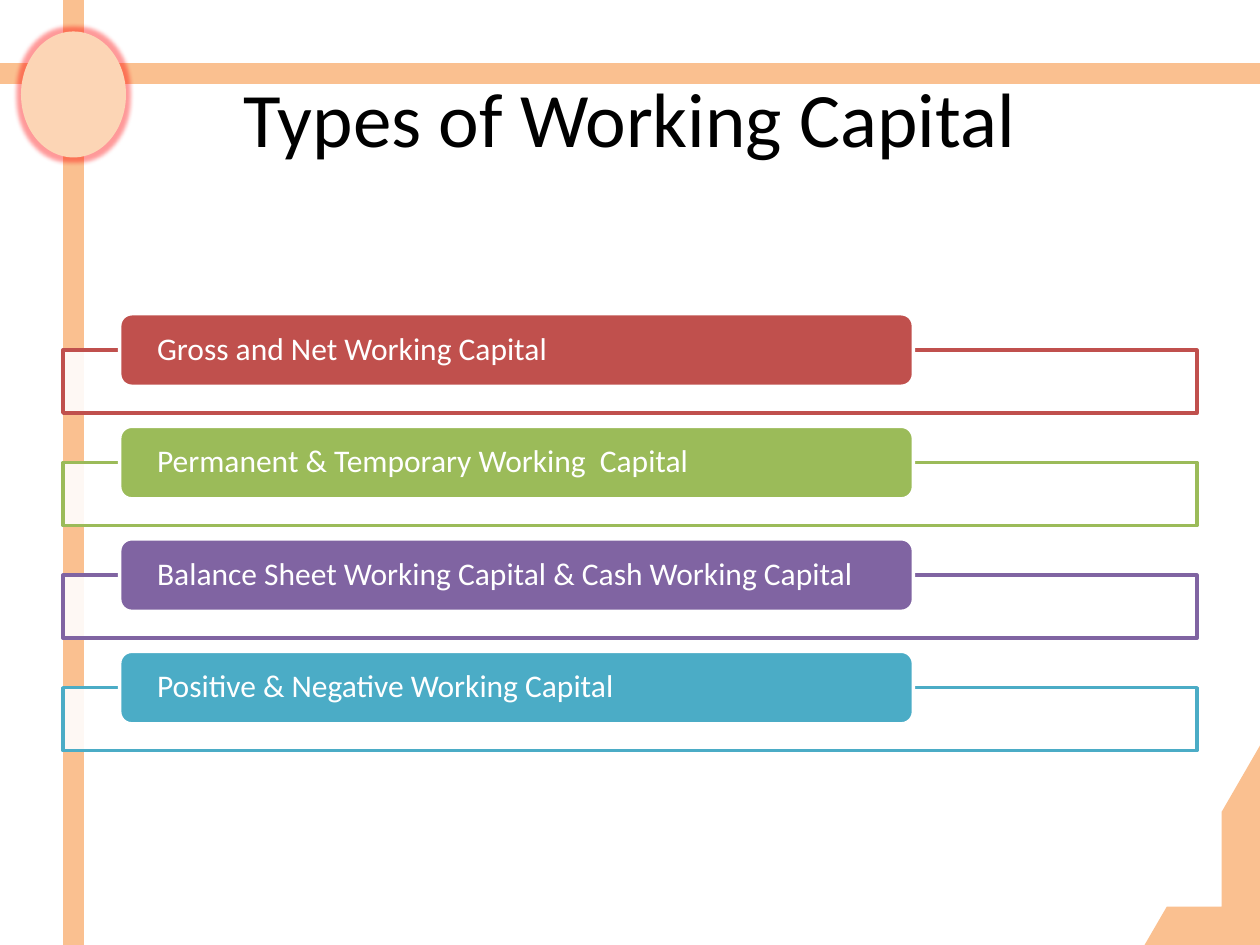
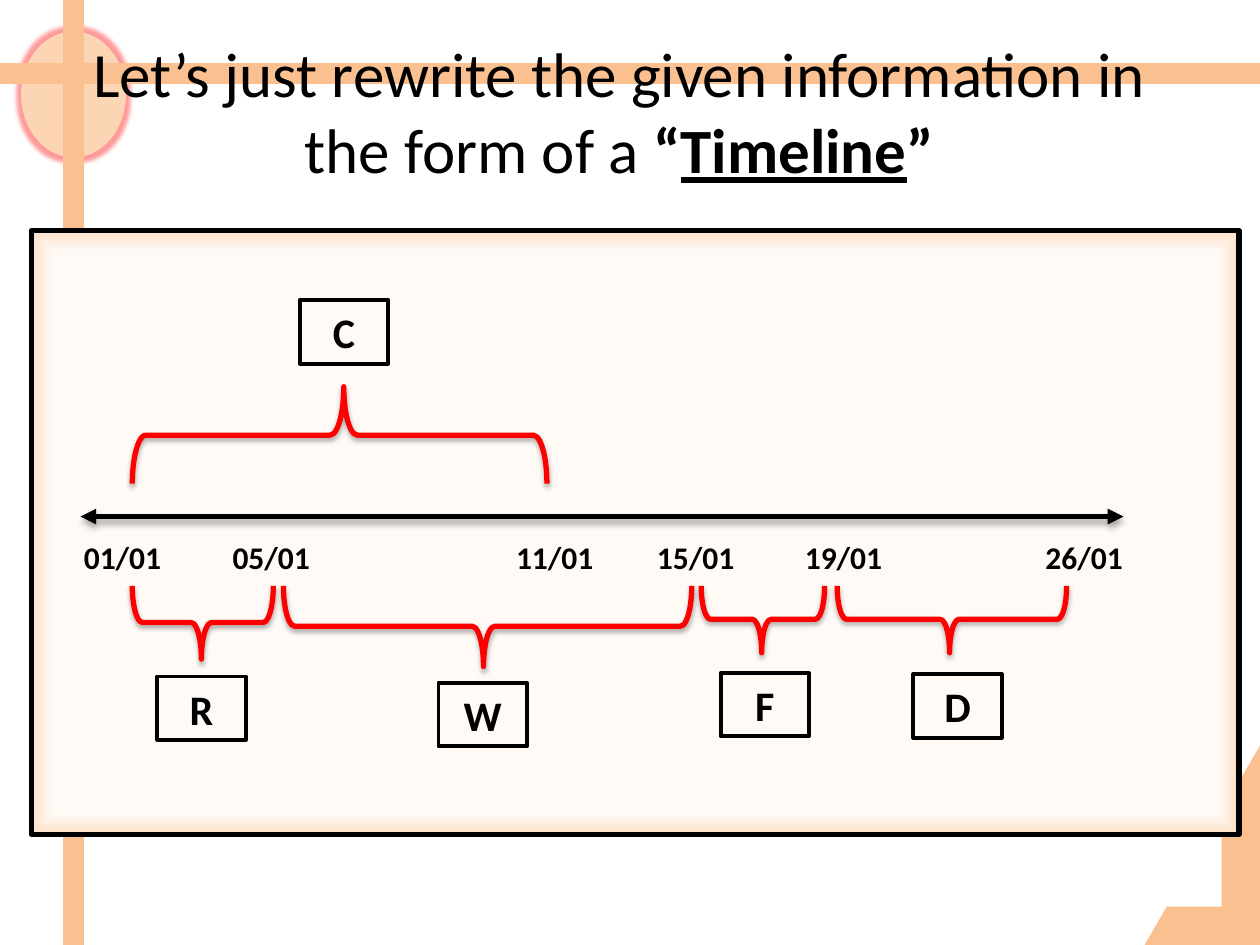
from lxml.etree import SubElement
from pptx import Presentation
from pptx.dml.color import RGBColor
from pptx.enum.shapes import MSO_CONNECTOR, MSO_SHAPE
from pptx.enum.text import MSO_ANCHOR, PP_ALIGN
from pptx.oxml import parse_xml
from pptx.oxml.ns import nsdecls, qn
from pptx.util import Pt

FONT = "Calibri"
BLACK = RGBColor(0x00, 0x00, 0x00)
WHITE = RGBColor(0xFF, 0xFF, 0xFF)
RED = RGBColor(0xFF, 0x00, 0x00)
ORANGE = RGBColor(0xFA, 0xC0, 0x90)
PEACH = RGBColor(0xFC, 0xD5, 0xB5)
BRICK = RGBColor(0xC0, 0x50, 0x4D)
GREEN = RGBColor(0x9B, 0xBB, 0x59)
PURPLE = RGBColor(0x80, 0x64, 0xA2)
TEAL = RGBColor(0x4B, 0xAC, 0xC6)
CREAM = RGBColor(0xFF, 0xFA, 0xF6)
APRICOT = RGBColor(0xFD, 0xE0, 0xC7)

NO_EFFECT = f'<a:effectLst {nsdecls("a")}/>'
GLOW = (
    f'<a:effectLst {nsdecls("a")}><a:glow rad="63500"><a:srgbClr val="{RED}">'
    '<a:alpha val="40000"/></a:srgbClr></a:glow></a:effectLst>'
)
SHADOW = (
    f'<a:effectLst {nsdecls("a")}><a:outerShdw blurRad="39400" dist="22900" dir="5400000" '
    f'rotWithShape="0"><a:srgbClr val="{BLACK}"><a:alpha val="35000"/></a:srgbClr>'
    '</a:outerShdw></a:effectLst>'
)
PANEL_GRADIENT = (
    f'<a:gradFill {nsdecls("a")} rotWithShape="1"><a:gsLst>'
    f'<a:gs pos="0"><a:srgbClr val="{CREAM}"/></a:gs>'
    f'<a:gs pos="93000"><a:srgbClr val="{CREAM}"/></a:gs>'
    f'<a:gs pos="100000"><a:srgbClr val="{APRICOT}"/></a:gs></a:gsLst>'
    '<a:path path="shape"><a:fillToRect l="50000" t="50000" r="50000" b="50000"/></a:path>'
    '</a:gradFill>'
)


def draw(slide, preset, box, fill=None, line=None, width=2, effect=NO_EFFECT, rotation=0):
    shape = slide.shapes.add_shape(preset, *map(Pt, box))
    shape.rotation = rotation
    if fill is None:
        shape.fill.background()
    else:
        shape.fill.solid()
        shape.fill.fore_color.rgb = fill
    if line is None:
        shape.line.fill.background()
    else:
        shape.line.color.rgb = line
        shape.line.width = Pt(width)
    shape._element.spPr.append(parse_xml(effect))
    return shape


def write(shape, runs, size, color=BLACK, align=PP_ALIGN.CENTER):
    frame = shape.text_frame
    frame.word_wrap = True
    frame.vertical_anchor = MSO_ANCHOR.MIDDLE
    paragraph = frame.paragraphs[0]
    paragraph.alignment = align
    for text, bold, underline in runs:
        run = paragraph.add_run()
        run.text = text
        run.font.name = FONT
        run.font.size = Pt(size)
        run.font.color.rgb = color
        run.font.bold = bold
        run.font.underline = underline
    return paragraph


prs = Presentation()
prs.slide_width, prs.slide_height = Pt(720), Pt(540)

BANDS = [
    (MSO_SHAPE.RECTANGLE, (36, 0, 12, 540), ORANGE),
    (MSO_SHAPE.RECTANGLE, (0, 36, 720, 12), ORANGE),
]
MEDALLION = (MSO_SHAPE.OVAL, (12, 18, 60, 72), PEACH)
CORNER = (MSO_SHAPE.HALF_FRAME, (654, 426, 66, 114), ORANGE)

TITLES = [
    ([*BANDS, MEDALLION], 36, 21.6, 44, [("Types of Working Capital", False, False)]),
    ([MEDALLION, *BANDS], 30, 18, 36, [
        ("Let’s just rewrite the given information in the form of a", False, False),
        (" “", True, False),
        ("Timeline", True, True),
        ("”", True, False),
    ]),
]
slides = []
for ornaments, left, top, size, title_runs in TITLES:
    slide = prs.slides.add_slide(prs.slide_layouts[6])
    for preset, box, fill in ornaments:
        effect = GLOW if preset == MSO_SHAPE.OVAL else NO_EFFECT
        draw(slide, preset, box, fill, effect=effect)
    draw(slide, *CORNER, rotation=180)
    title = slide.shapes.add_textbox(Pt(left), Pt(top), Pt(648), Pt(90))
    write(title, title_runs, size)
    slides.append(slide)
types_slide, timeline_slide = slides

CAPITAL_TYPES = [
    ("Gross and Net Working Capital", BRICK),
    ("Permanent & Temporary Working  Capital", GREEN),
    ("Balance Sheet Working Capital & Cash Working Capital", PURPLE),
    ("Positive & Negative Working Capital", TEAL),
]
for row, (name, color) in enumerate(CAPITAL_TYPES):
    top = 179.3 + row * 64.3
    tray = draw(types_slide, MSO_SHAPE.RECTANGLE, (36, top + 20.8, 648, 36), WHITE, color)
    white = tray._element.spPr.find(qn("a:solidFill")).find(qn("a:srgbClr"))
    SubElement(white, qn("a:alpha"), val="90000")
    label = draw(types_slide, MSO_SHAPE.ROUNDED_RECTANGLE, (68.4, top, 453.6, 41.5), color, WHITE)
    label.text_frame.margin_left = label.text_frame.margin_right = Pt(19.4)
    write(label, [(name, False, False)], 18, WHITE, PP_ALIGN.LEFT).line_spacing = 0.9

panel = draw(timeline_slide, MSO_SHAPE.RECTANGLE, (18, 131.8, 690, 345), line=BLACK, width=3)
panel_properties = panel._element.spPr
panel_properties.replace(panel_properties.find(qn("a:noFill")), parse_xml(PANEL_GRADIENT))

axis = timeline_slide.shapes.add_connector(
    MSO_CONNECTOR.STRAIGHT, Pt(46), Pt(295.2), Pt(642), Pt(295.2))
axis.line.color.rgb = BLACK
axis.line.width = Pt(3)
for end in ("a:headEnd", "a:tailEnd"):
    SubElement(axis.line._get_or_add_ln(), qn(end), type="triangle")
axis._element.spPr.append(parse_xml(SHADOW))

PERIODS = [
    ("C", 75.6, 312.5, 221, 55.4, 90, 171.4, 171.4),
    ("R", 75.6, 156.2, 334.8, 41.8, 270, 90, 386.6),
    ("W", 162, 395.3, 334.8, 46.1, 270, 250.6, 390.2),
    ("F", 400.7, 471.2, 334.8, 38.2, 270, 411.8, 384.5),
    ("D", 478.4, 609.5, 334.8, 38.2, 270, 522, 385.2),
]
for letter, start, end, top, depth, rotation, box_left, box_top in PERIODS:
    span = end - start
    brace_box = ((start + end - depth) / 2, top + (depth - span) / 2, depth, span)
    brace = draw(timeline_slide, MSO_SHAPE.LEFT_BRACE, brace_box,
                 line=RED, width=3, effect=SHADOW, rotation=rotation)
    brace.adjustments[0] = 0.14
    brace.adjustments[1] = 0.49
    period = draw(timeline_slide, MSO_SHAPE.RECTANGLE, (box_left, box_top, 50.4, 36.4),
                  line=BLACK, width=2.25)
    write(period, [(letter, True, False)], 24)

DATES = [("01/01", 70), ("05/01", 155), ("11/01", 317),
         ("15/01", 397.5), ("19/01", 482), ("26/01", 619.5)]
for date, center in DATES:
    tick = timeline_slide.shapes.add_textbox(Pt(center - 35), Pt(304), Pt(70), Pt(29))
    write(tick, [(date, True, False)], 18)

prs.save("out.pptx")
